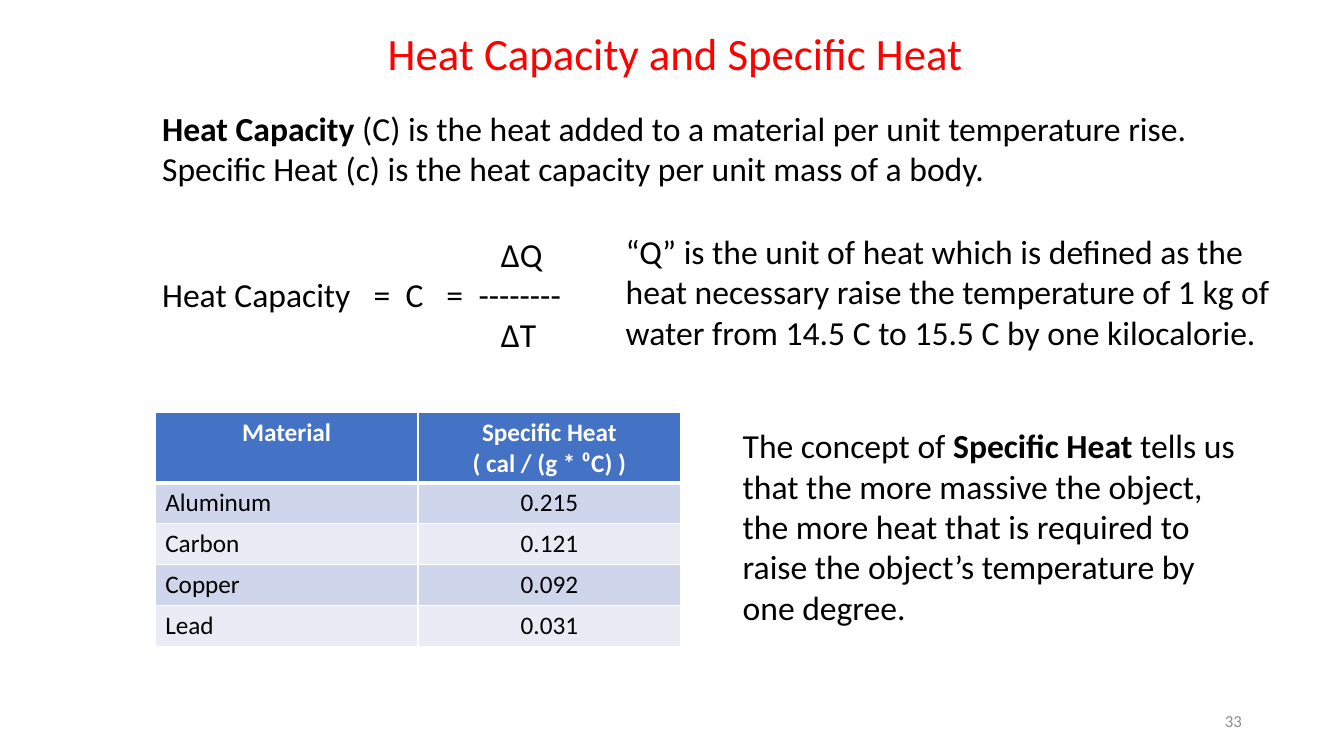
from dataclasses import dataclass
from pptx import Presentation
from pptx.dml.color import RGBColor as RGB
from pptx.enum.text import MSO_ANCHOR as Anchor, MSO_AUTO_SIZE as Fit, PP_ALIGN as Align
from pptx.oxml import parse_xml
from pptx.oxml.ns import nsdecls
from pptx.util import Pt


@dataclass(frozen=True)
class Theme:
    font: str = "Calibri"
    red: str = "FF0000"
    black: str = "000000"
    white: str = "FFFFFF"
    gray: str = "8C8C8C"
    head: str = "4472C4"
    bands: tuple = ("CFD5EA", "E9EBF5")
    title: int = 32
    body: int = 24
    cell: int = 18
    small: int = 12


class Deck:
    def __init__(self, theme):
        self.theme = theme
        self.prs = Presentation()
        self.prs.slide_width, self.prs.slide_height = Pt(960), Pt(540)
        self.slide = self.prs.slides.add_slide(self.prs.slide_layouts[5])

    def style(self, font, size, color, bold=False):
        form = {"name": self.theme.font, "size": Pt(size), "bold": bold}
        for key, value in form.items():
            setattr(font, key, value)
        font.color.rgb = RGB.from_string(color)

    def fill(self, frame, paras, size, color, align=Align.LEFT):
        """Each paragraph is a list of (text, bold) runs."""
        for i, runs in enumerate(paras):
            para = frame.add_paragraph() if i else frame.paragraphs[0]
            para.alignment = align
            for text, bold in runs:
                run = para.add_run()
                run.text = text
                self.style(run.font, size, color, bold)

    def title(self, text, box):
        shape = self.slide.shapes.title
        sides = ("left", "top", "width", "height")
        for side, value in zip(sides, box):
            setattr(shape, side, Pt(value))
        frame = shape.text_frame
        frame.auto_size, frame.vertical_anchor = Fit.NONE, Anchor.TOP
        self.fill(frame, [[(text, False)]], self.theme.title, self.theme.red, Align.CENTER)

    def text(self, paras, box):
        frame = self.slide.shapes.add_textbox(*map(Pt, box)).text_frame
        frame.word_wrap = True
        self.fill(frame, paras, self.theme.body, self.theme.black)
        return frame

    def formula(self, lines, box):
        """Each line is (text, tab stops in points)."""
        frame = self.text([[(text, False)] for text, _ in lines], box)
        for para, (_, stops) in zip(frame.paragraphs, lines):
            tabs = "".join(f'<a:tab pos="{Pt(stop)}" algn="l"/>' for stop in stops)
            props = para._p.get_or_add_pPr()
            props.append(parse_xml(f'<a:tabLst {nsdecls("a")}>{tabs}</a:tabLst>'))

    def number(self, value, box):
        frame = self.text([], box)
        frame.vertical_anchor = Anchor.MIDDLE
        para = frame.paragraphs[0]
        para.alignment = Align.RIGHT
        para._p.append(parse_xml(
            f'<a:fld {nsdecls("a")} id="{{B6F15528-21DE-4FAA-801E-634DDDAF4B2B}}" '
            f'type="slidenum"><a:rPr lang="en-US" sz="{self.theme.small * 100}">'
            f'<a:solidFill><a:srgbClr val="{self.theme.gray}"/></a:solidFill>'
            f'<a:latin typeface="{self.theme.font}"/></a:rPr>'
            f'<a:t>{value}</a:t></a:fld>'))
        self.prs.element.set("firstSlideNum", str(value))

    def edge(self, cell, head, first):
        widths = {"L": 1, "R": 1, "T": 3 if first else 1, "B": 3 if head else 1}
        props = cell._tc.get_or_add_tcPr()
        for i, (side, width) in enumerate(widths.items()):
            props.insert(i, parse_xml(
                f'<a:ln{side} {nsdecls("a")} w="{Pt(width)}"><a:solidFill>'
                f'<a:srgbClr val="{self.theme.white}"/></a:solidFill></a:ln{side}>'))

    def table(self, rows, box, tall, low):
        theme = self.theme
        grid = self.slide.shapes.add_table(len(rows), len(rows[0]), *map(Pt, box)).table
        for r, row in enumerate(rows):
            head = r == 0
            grid.rows[r].height = Pt(tall if head else low)
            for c, text in enumerate(row):
                cell = grid.cell(r, c)
                cell.fill.solid()
                shade = theme.head if head else theme.bands[(r - 1) % 2]
                cell.fill.fore_color.rgb = RGB.from_string(shade)
                self.edge(cell, head, r == 1)
                self.fill(cell.text_frame, [[(line, head)] for line in text.split("\n")],
                          theme.cell, theme.white if head else theme.black,
                          Align.CENTER if head or c else Align.LEFT)


def main():
    deck = Deck(Theme())

    # Title and definitions
    deck.title("Heat Capacity and Specific Heat", (130.3, 14.4, 704.2, 46))
    deck.text([[("Heat Capacity ", True),
                ("(C) is the heat added to a material per unit temperature rise. "
                 "Specific Heat (c) is the heat capacity per unit mass of a body.", False)]],
              (108.7, 73.4, 817.2, 65.5))

    # Formula and its unit
    deck.formula([("\t∆Q", [242]),
                  ("Heat Capacity\t=\tC\t=\t--------", [151, 174, 203, 226]),
                  ("\t∆T", [242])], (108.7, 163.4, 323.3, 94.3))
    deck.text([[("“Q” is the unit of heat which is defined as the heat necessary raise "
                 "the temperature of 1 kg of water from 14.5 C to 15.5 C "
                 "by one kilocalorie.", False)]], (439.9, 161.3, 475.2, 94.3))

    # Specific heat table
    deck.table([("Material", "Specific Heat\n( cal / (g * ⁰C) )"),
                ("Aluminum", "0.215"),
                ("Carbon", "0.121"),
                ("Copper", "0.092"),
                ("Lead", "0.031")], (110.9, 294.5, 375.4, 167), 50.4, 29.2)

    # Concept and slide number
    deck.text([[("The concept of ", False), ("Specific Heat ", True),
                ("tells us that the more massive the object, the more heat that is "
                 "required to raise the object’s temperature by one degree.", False)]],
              (523.4, 300.2, 370.8, 152.6))
    deck.number(33, (678.2, 500.4, 216, 28.8))

    deck.prs.save("out.pptx")


if __name__ == "__main__":
    main()
